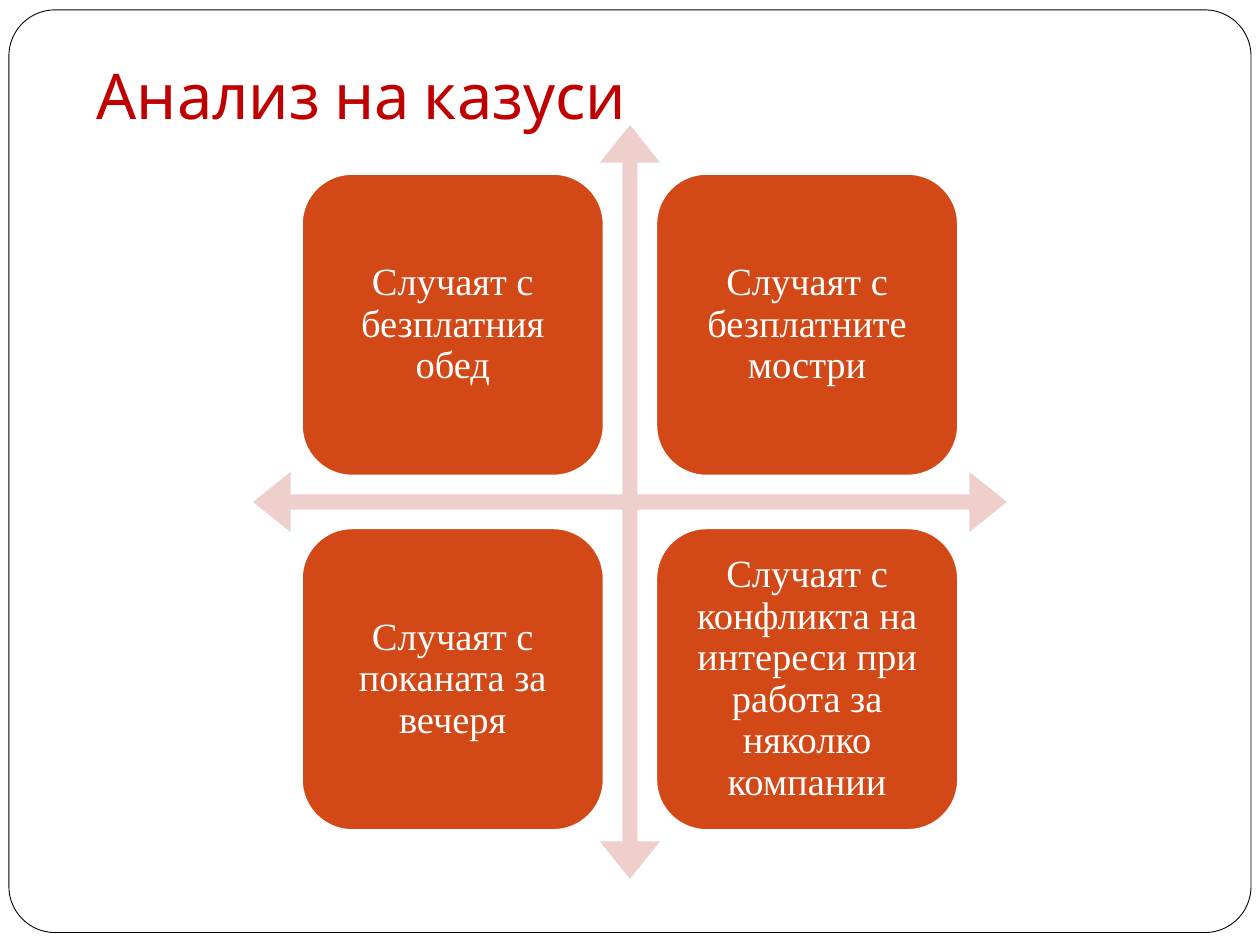
from dataclasses import dataclass

from pptx import Presentation
from pptx.dml.color import RGBColor
from pptx.enum import shapes, text
from pptx.util import Cm, Pt


@dataclass(frozen=True)
class Theme:
    paper: RGBColor = RGBColor.from_string("FFFFFF")
    frame: RGBColor = RGBColor.from_string("000000")
    title: RGBColor = RGBColor.from_string("C00000")
    arrows: RGBColor = RGBColor.from_string("EFCFCC")
    card: RGBColor = RGBColor.from_string("D34817")
    title_font: str = "Cabin"
    card_font: str = "Times New Roman"
    title_size: int = 36
    card_size: int = 22


THEME = Theme()
CASES = [
    ["Случаят с безплатния обед", "Случаят с безплатните мостри"],
    ["Случаят с поканата за вечеря",
     "Случаят с конфликта на интереси при работа за няколко компании"],
]


def add_shape(page, kind, box, fill, line=None, width=0, adjustments=()):
    """Add a flat shape; box is left, top, width, height in centimetres."""
    shape = page.shapes.add_shape(kind, *(Cm(length) for length in box))
    shape.shadow.inherit = False
    shape.fill.solid()
    shape.fill.fore_color.rgb = fill
    if line is None:
        shape.line.fill.background()
    else:
        shape.line.color.rgb = line
        shape.line.width = Pt(width)
    for index, value in enumerate(adjustments):
        shape.adjustments[index] = value
    return shape


def write(shape, words, font, size, color, align, anchor, insets):
    """Fill a shape with one paragraph; insets are left, top, right, bottom."""
    frame = shape.text_frame
    frame.word_wrap = True
    frame.auto_size = text.MSO_AUTO_SIZE.NONE
    frame.vertical_anchor = anchor
    (frame.margin_left, frame.margin_top,
     frame.margin_right, frame.margin_bottom) = map(Cm, insets)
    para = frame.paragraphs[0]
    para.alignment = align
    span = para.add_run()
    span.text = words
    span.font.name = font
    span.font.size = Pt(size)
    span.font.color.rgb = color
    return para


def add_frame(page, box):
    frame = add_shape(page, shapes.MSO_SHAPE.ROUNDED_RECTANGLE, box,
                      THEME.paper, THEME.frame, 0.5, [0.05])
    page.shapes.title.element.addprevious(frame.element)


def place_title(page, box, words):
    title = page.shapes.title
    title.left, title.top, title.width, title.height = map(Cm, box)
    write(title, words, THEME.title_font, THEME.title_size, THEME.title,
          text.PP_ALIGN.LEFT, text.MSO_ANCHOR.BOTTOM,
          (0.25, 0.13, 0.25, 0.25))


def add_matrix(page, box, cases):
    """Four-way arrow with one card in each quadrant of a square box."""
    left, top, side, _ = box
    add_shape(page, shapes.MSO_SHAPE.QUAD_ARROW, box, THEME.arrows,
              adjustments=[0.02, 0.04, 0.05])
    card_side = 0.4 * side
    margin = 0.065 * side
    step = side - 2 * margin - card_side
    for row, names in enumerate(cases):
        for column, name in enumerate(names):
            place = (left + margin + column * step,
                     top + margin + row * step, card_side, card_side)
            card = add_shape(page, shapes.MSO_SHAPE.ROUNDED_RECTANGLE, place,
                             THEME.card, THEME.paper, 1)
            para = write(card, name, THEME.card_font, THEME.card_size,
                         THEME.paper, text.PP_ALIGN.CENTER,
                         text.MSO_ANCHOR.MIDDLE, [0.23] * 4)
            para.line_spacing = 0.9


def main():
    deck = Presentation()
    deck.slide_width, deck.slide_height = Cm(25.4), Cm(19.05)
    page = deck.slides.add_slide(deck.slide_layouts.get_by_name("Title Only"))
    add_frame(page, (0.18, 0.2, 25.04, 18.6))
    place_title(page, (1.7, 0.91, 21.6, 2), "Анализ на казуси")
    add_matrix(page, (5.1, 2.52, 15.2, 15.2), CASES)
    deck.save("out.pptx")


if __name__ == "__main__":
    main()
